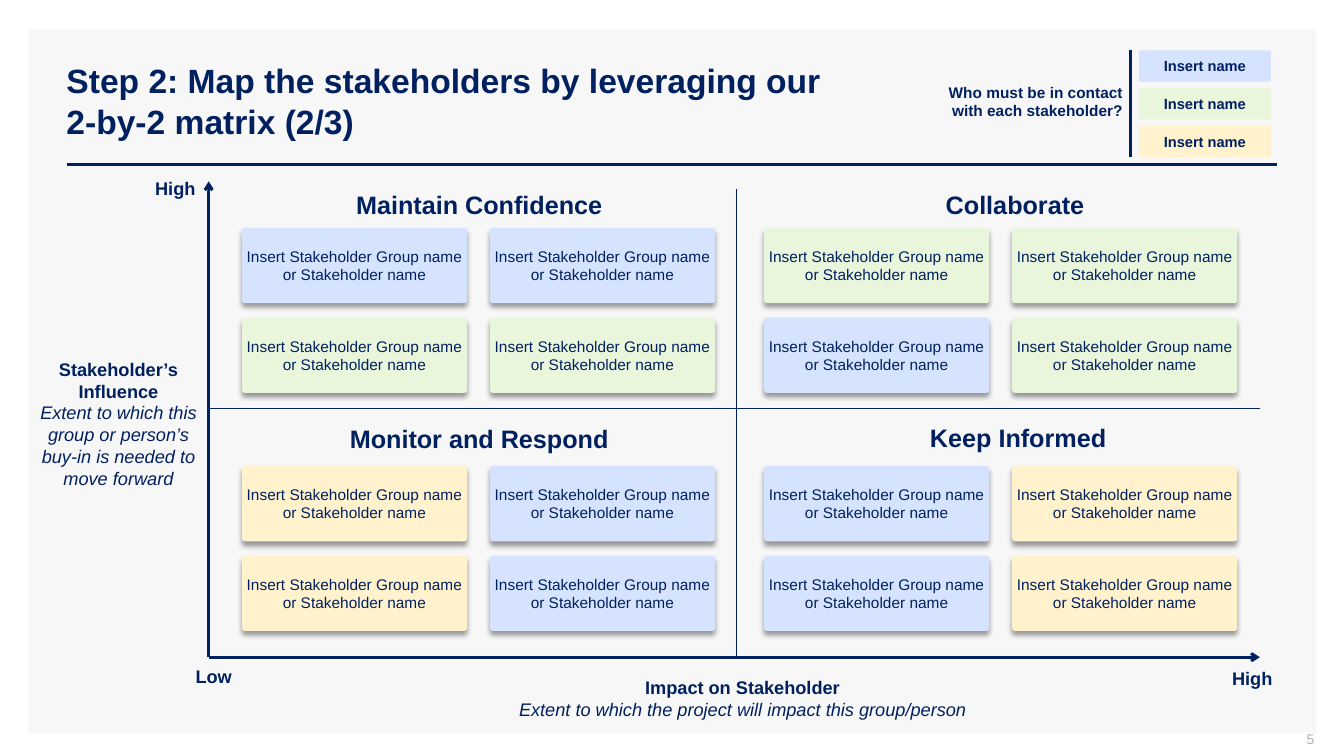
import lxml.etree
import pptx
import pptx.dml.color
import pptx.enum.shapes
import pptx.enum.text
import pptx.oxml
import pptx.oxml.ns
import pptx.util

RGB = pptx.dml.color.RGBColor
NAVY = RGB(0x00, 0x20, 0x60)
GREY = RGB(0xAD, 0xAF, 0xBB)
PANEL = RGB(0xF7, 0xF7, 0xF7)
BLUE = RGB(0xD6, 0xE3, 0xFF)
GREEN = RGB(0xE9, 0xF6, 0xDC)
GOLD = RGB(0xFF, 0xF2, 0xCC)
ALIGN = pptx.enum.text.PP_ALIGN
ANCHOR = pptx.enum.text.MSO_ANCHOR
FIT = pptx.enum.text.MSO_AUTO_SIZE
SHAPE = pptx.enum.shapes.MSO_SHAPE
LINE = pptx.enum.shapes.MSO_CONNECTOR
SHADOW = (
    '<a:effectLst %s><a:outerShdw blurRad="50800" dist="38100" dir="5400000" algn="t" rotWithShape="0">'
    '<a:srgbClr val="000000"><a:alpha val="40000"/></a:srgbClr></a:outerShdw></a:effectLst>'
    % pptx.oxml.ns.nsdecls("a")
)


class Deck:
    font = "Arial"
    pad = (0.18, 0.1, 0.18, 0.1)

    def __init__(self):
        self.show = pptx.Presentation()
        self.show.slide_width = pptx.util.Cm(33.87)
        self.show.slide_height = pptx.util.Cm(19.05)
        self.slide = self.show.slides.add_slide(self.show.slide_layouts[5])
        self.shapes = self.slide.shapes

    def cm(self, *sizes):
        return [pptx.util.Cm(size) for size in sizes]

    def fill_text(self, frame, paras, size, align, color=NAVY):
        for n, runs in enumerate(paras):
            para = frame.paragraphs[0] if n == 0 else frame.add_paragraph()
            para.alignment = align
            for text, bold, slant in runs:
                run = para.add_run()
                run.text = text
                font = run.font
                font.name = self.font
                font.size = pptx.util.Pt(size)
                font.bold = bold
                font.italic = slant
                font.color.rgb = color

    def inset(self, frame, pad):
        frame.margin_left, frame.margin_top, frame.margin_right, frame.margin_bottom = self.cm(*pad)

    def title(self, text, area):
        head = self.shapes.title
        head.left, head.top, head.width, head.height = self.cm(*area)
        frame = head.text_frame
        frame.word_wrap = True
        frame.auto_size = FIT.NONE
        frame.vertical_anchor = ANCHOR.MIDDLE
        self.fill_text(frame, [[(text, True, False)]], 24, ALIGN.LEFT)

    def text(self, paras, area, size, align=ALIGN.CENTER, pad=pad, wrap=True):
        frame = self.shapes.add_textbox(*self.cm(*area)).text_frame
        frame.word_wrap = wrap
        frame.auto_size = FIT.SHAPE_TO_FIT_TEXT
        self.inset(frame, pad)
        self.fill_text(frame, paras, size, align)

    def number(self, text, area):
        frame = self.shapes.add_textbox(*self.cm(*area)).text_frame
        frame.word_wrap = True
        frame.vertical_anchor = ANCHOR.MIDDLE
        self.inset(frame, (0.25, 0, 0, 0.13))
        self.fill_text(frame, [[(text, False, False)]], 10, ALIGN.RIGHT, GREY)

    def block(self, kind, area, color):
        shape = self.shapes.add_shape(kind, *self.cm(*area))
        shape.shadow.inherit = False
        shape.fill.solid()
        shape.fill.fore_color.rgb = color
        shape.line.fill.background()
        return shape

    def panel(self, area):
        back = self.block(SHAPE.RECTANGLE, area, PANEL)
        self.shapes._spTree.insert(2, back._element)

    def card(self, text, area, color, size, bold=False, raised=False):
        shape = self.block(SHAPE.ROUNDED_RECTANGLE, area, color)
        shape.adjustments[0] = 0.04
        if raised:
            props = shape._element.spPr
            props.remove(props.find(pptx.oxml.ns.qn("a:effectLst")))
            props.append(pptx.oxml.parse_xml(SHADOW))
        frame = shape.text_frame
        frame.word_wrap = True
        frame.vertical_anchor = ANCHOR.MIDDLE
        self.inset(frame, (0.05, 0.13, 0.05, 0.13))
        self.fill_text(frame, [[(text, bold, False)]], size, ALIGN.CENTER)

    def line(self, ends, width, arrow=False):
        link = self.shapes.add_connector(LINE.STRAIGHT, *self.cm(*ends))
        link.line.color.rgb = NAVY
        link.line.width = pptx.util.Pt(width)
        qn = pptx.oxml.ns.qn
        if arrow:
            stroke = link.line._get_or_add_ln()
            lxml.etree.SubElement(stroke, qn("a:tailEnd"), type="arrow")
        lxml.etree.SubElement(link._element.spPr, qn("a:effectLst"))


def main():
    deck = Deck()
    deck.panel((0.71, 0.74, 32.46, 17.73))
    deck.title("Step 2: Map the stakeholders by leveraging our 2-by-2 matrix (2/3)",
               (1.42, 1.02, 20.17, 3.02))
    deck.line((1.68, 4.14, 32.18, 4.14), 2)
    deck.number("5", (25.5, 18.42, 7.62, 0.53))

    deck.text([[("Who must be in contact with each stakeholder?", True, False)]],
              (23.11, 1.96, 5.44, 1.24), 11, ALIGN.RIGHT, (0.25, 0.13, 0.25, 0.13))
    deck.line((28.5, 1.27, 28.5, 3.96), 2.25)
    for n, color in enumerate((BLUE, GREEN, GOLD)):
        deck.card("Insert name", (28.7, 1.27 + n * 0.95, 3.33, 0.79), color, 10.5, bold=True)

    left, base, right = 5.26, 16.56, 31.75
    deck.line((left, 10.3, right, 10.3), 0.75)
    deck.line((18.57, base, 18.57, 4.75), 0.75)
    deck.line((left, base, left, 4.57), 2, arrow=True)
    deck.line((left, base, right, base), 2, arrow=True)

    quads = (
        ("Maintain Confidence", 12.08, 4.67, 0, 0, (BLUE, BLUE, GREEN, GREEN)),
        ("Collaborate", 25.58, 4.67, 1, 0, (GREEN, GREEN, BLUE, GREEN)),
        ("Monitor and Respond", 12.08, 10.57, 0, 1, (GOLD, BLUE, GOLD, BLUE)),
        ("Keep Informed", 25.66, 10.54, 1, 1, (BLUE, GOLD, BLUE, GOLD)),
    )
    for name, mid, top, col, row, colors in quads:
        deck.text([[(name, True, False)]], (mid - 3.5, top, 7, 0.94), 18)
        for n, color in enumerate(colors):
            x = 6.1 + col * 13.16 + n % 2 * 6.25
            y = 5.74 + row * 6 + n // 2 * 2.26
            deck.card("Insert Stakeholder Group name or Stakeholder name",
                      (x, y, 5.67, 1.9), color, 11, raised=True)

    deck.text([[("Stakeholder’s Influence", True, False)],
               [("Extent to which this group or person’s buy-in is needed to move forward", False, True)]],
              (0.56, 8.92, 4.85, 3.51), 13)
    deck.text([[("Impact on Stakeholder", True, False)],
               [("Extent to which the project will impact this group/person", False, True)]],
              (11.79, 16.94, 13.84, 1.55), 13)
    for mark, x, y, wide in (("High", 3.73, 4.37, 1.4), ("Low", 4.75, 16.66, 1.3), ("High", 30.87, 16.71, 1.4)):
        deck.text([[(mark, True, False)]], (x, y, wide, 0.74), 13, ALIGN.LEFT, wrap=False)

    deck.show.save("out.pptx")


if __name__ == "__main__":
    main()
